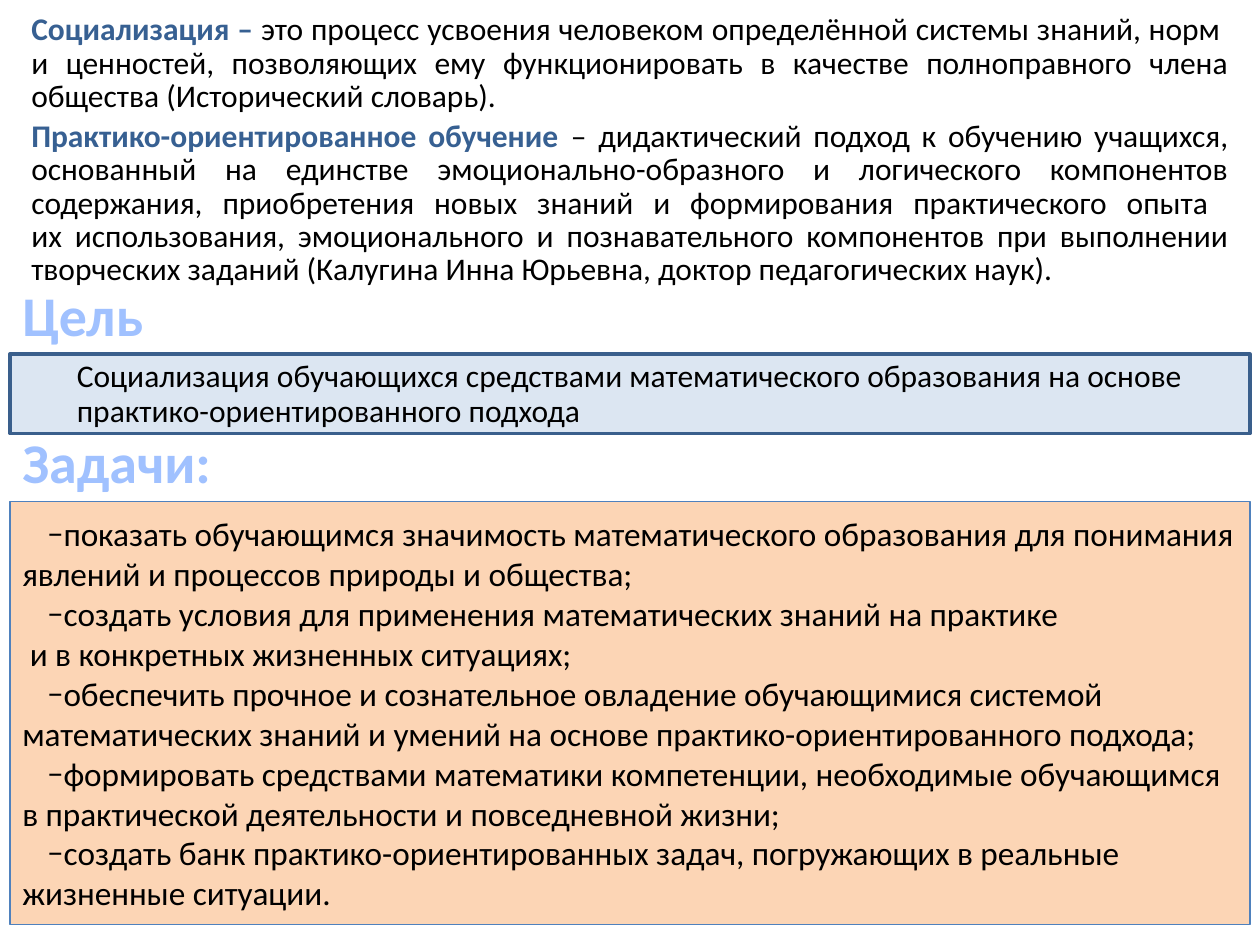
from pptx import Presentation
from pptx.dml.color import RGBColor
from pptx.enum.shapes import MSO_SHAPE as SHAPE
from pptx.enum.text import MSO_ANCHOR as ANCHOR, PP_ALIGN as ALIGN
from pptx.oxml.ns import qn
from pptx.util import Cm, Pt
from lxml.etree import SubElement

BLACK = RGBColor(0x00, 0x00, 0x00)
TERM = RGBColor(0x37, 0x60, 0x92)
HEADING = RGBColor(0xA0, 0xC1, 0xFF)
GOAL_FILL = RGBColor(0xDC, 0xE6, 0xF2)
GOAL_LINE = RGBColor(0x3A, 0x5F, 0x8C)
TASK_FILL = RGBColor(0xFC, 0xD5, 0xB5)
TASK_LINE = RGBColor(0x4F, 0x81, 0xBD)
FONT = "Calibri"

DEFINITIONS = [
    ("Социализация –",
     " это процесс усвоения человеком определённой системы знаний, норм \n"
     "и ценностей, позволяющих ему функционировать в качестве полноправного "
     "члена общества (Исторический словарь)."),
    ("Практико-ориентированное обучение ",
     "– дидактический подход к обучению учащихся, основанный на единстве "
     "эмоционально-образного и логического компонентов содержания, приобретения "
     "новых знаний и формирования практического опыта \n"
     "их использования, эмоционального и познавательного компонентов при выполнении "
     "творческих заданий (Калугина Инна Юрьевна, доктор педагогических наук)."),
]
GOAL = ("Социализация обучающихся средствами математического образования "
        "на основе практико-ориентированного подхода")
TASKS = [
    "показать обучающимся значимость математического образования для понимания "
    "явлений и процессов природы и общества;",
    "создать условия для применения математических знаний на практике\n"
    " и в конкретных жизненных ситуациях;",
    "обеспечить прочное и сознательное овладение обучающимися системой "
    "математических знаний и умений на основе практико-ориентированного подхода;",
    "формировать средствами математики компетенции, необходимые обучающимся\n"
    "в практической деятельности и повседневной жизни;",
    "создать банк практико-ориентированных задач, погружающих в реальные "
    "жизненные ситуации.",
]


def place(sp, box):
    """Move a shape to a left, top, width, height box in centimetres."""
    sp.left, sp.top, sp.width, sp.height = (Cm(v) for v in box)


def format_runs(runs, size, color, bold=False):
    """Give runs the slide font with a size, colour and weight."""
    for r in runs:
        r.font.name, r.font.size, r.font.bold = FONT, Pt(size), bold
        r.font.color.rgb = color


def set_bullet(p, indent, char=None):
    """Set the first-line indent in centimetres and the bullet, if any."""
    pPr = p._p.get_or_add_pPr()
    pPr.set("marL", "0")
    pPr.set("indent", str(Cm(indent)))
    if char:
        SubElement(pPr, qn("a:buFont")).set("typeface", FONT)
        SubElement(pPr, qn("a:buChar")).set("char", char)
    else:
        SubElement(pPr, qn("a:buNone"))


def add_paragraphs(tf, count):
    """Return the given number of paragraphs of an empty text frame."""
    return [tf.paragraphs[0]] + [tf.add_paragraph() for _ in range(count - 1)]


def add_definitions(sp, box):
    """Fill the body placeholder with terms and their definitions."""
    place(sp, box)
    tf = sp.text_frame
    tf.vertical_anchor = ANCHOR.TOP
    tf.margin_left = tf.margin_right = Cm(0.23)
    tf.margin_top = tf.margin_bottom = 0
    for i, (p, (term, meaning)) in enumerate(
            zip(add_paragraphs(tf, len(DEFINITIONS)), DEFINITIONS)):
        p.text = meaning
        format_runs(p.runs, 18, BLACK)
        r = p.add_run()
        r.text = term
        format_runs([r], 18, TERM, True)
        p.runs[0]._r.addprevious(r._r)
        p.alignment = ALIGN.JUSTIFY
        p.line_spacing = Pt(19)
        p.space_before = Pt(4 * i)
        set_bullet(p, 0)


def add_heading(slide, box, text):
    """Add a large section heading."""
    s = slide.shapes.add_textbox(*(Cm(v) for v in box))
    tf = s.text_frame
    tf.word_wrap = True
    tf.vertical_anchor = ANCHOR.MIDDLE
    tf.text = text
    format_runs(tf.paragraphs[0].runs, 32, HEADING, True)


def add_panel(slide, box, fill, line, width):
    """Add a filled rectangle and return its text frame."""
    s = slide.shapes.add_shape(SHAPE.RECTANGLE, *(Cm(v) for v in box))
    s.shadow.inherit = False
    s.fill.solid()
    s.fill.fore_color.rgb = fill
    s.line.color.rgb = line
    s.line.width = Pt(width)
    tf = s.text_frame
    tf.word_wrap = True
    tf.vertical_anchor = ANCHOR.MIDDLE
    return tf


def add_goal(slide, box):
    """Add the panel that states the goal."""
    tf = add_panel(slide, box, GOAL_FILL, GOAL_LINE, 2)
    tf.margin_left = Cm(1.35)
    tf.text = GOAL
    p = tf.paragraphs[0]
    p.alignment = ALIGN.LEFT
    p.line_spacing = Pt(20)
    format_runs(p.runs, 18, BLACK)


def add_tasks(slide, box):
    """Add the panel with the dashed list of tasks."""
    tf = add_panel(slide, box, TASK_FILL, TASK_LINE, 0.75)
    for p, task in zip(add_paragraphs(tf, len(TASKS)), TASKS):
        p.text = task
        p.alignment = ALIGN.LEFT
        format_runs(p.runs, 19, BLACK)
        set_bullet(p, 0.5, "–")


def main():
    """Build the slide and save it."""
    prs = Presentation()
    prs.slide_width, prs.slide_height = Cm(25.4), Cm(19.05)
    slide = prs.slides.add_slide(prs.slide_layouts[1])
    title = slide.shapes.title
    title.element.getparent().remove(title.element)
    left, width = 0.2, 25
    add_heading(slide, (left, 5.51, 5.77, 1.63), "Цель")
    add_goal(slide, (left, 7.14, width, 1.6))
    add_heading(slide, (left, 8.48, 5.77, 1.63), "Задачи:")
    add_tasks(slide, (left, 10.11, width, 8.53))
    add_definitions(slide.placeholders[1], (0.4, 0.28, 24.6, 5.94))
    prs.save("out.pptx")


if __name__ == "__main__":
    main()
